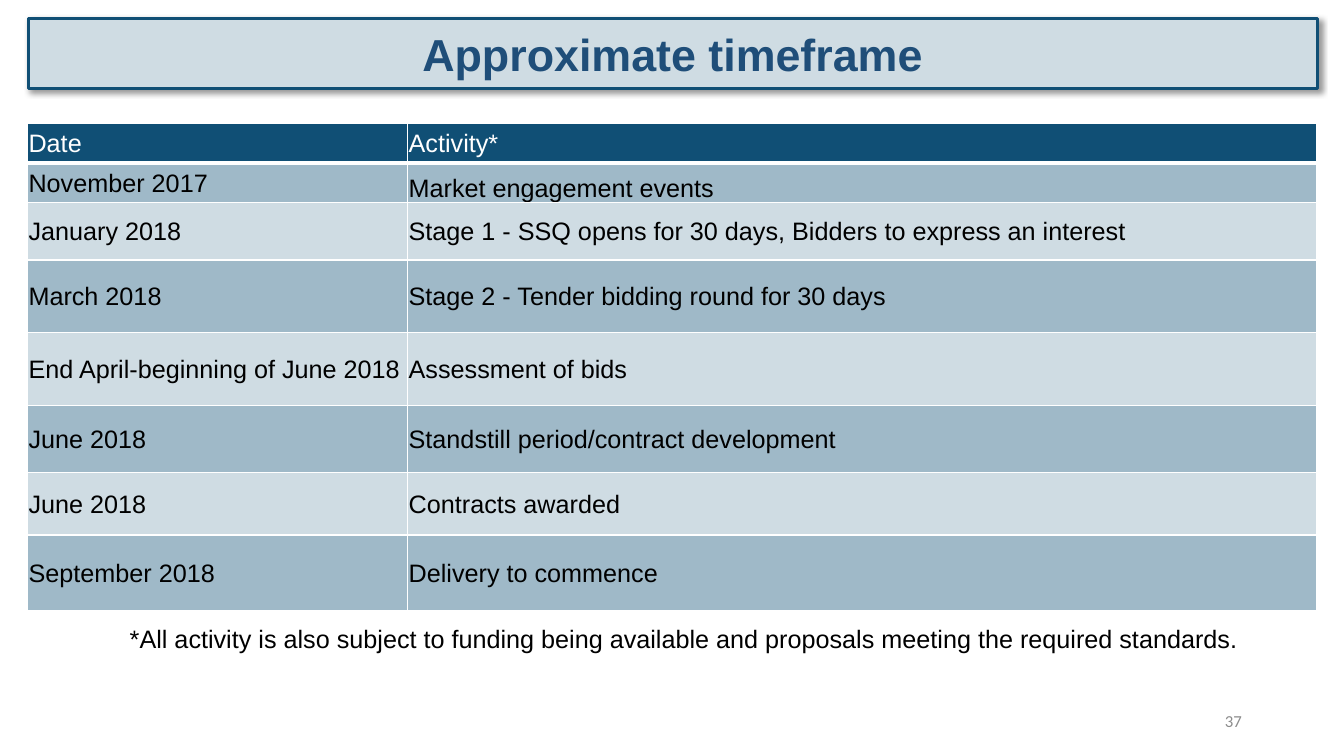
import pptx
import pptx.util
import pptx.dml.color
import pptx.enum.shapes
import pptx.enum.text
import pptx.oxml
import pptx.oxml.ns

Cm = pptx.util.Cm
Pt = pptx.util.Pt
ALIGN = pptx.enum.text.PP_ALIGN
ANCHOR = pptx.enum.text.MSO_ANCHOR

COLOURS = {
    "white": "FFFFFF",
    "black": "000000",
    "header": "104F75",
    "dark band": "9FB9C8",
    "light band": "CFDCE3",
    "title": "1F4E79",
    "page number": "8C8C8C",
}

TIMEFRAME = [
    ("Date", "Activity*"),
    ("November 2017", "Market engagement events"),
    ("January 2018", "Stage 1 - SSQ opens for 30 days, Bidders to express an interest"),
    ("March 2018", "Stage 2 - Tender bidding round for 30 days"),
    ("End April-beginning of June 2018", "Assessment of bids"),
    ("June 2018", "Standstill period/contract development"),
    ("June 2018", "Contracts awarded"),
    ("September 2018", "Delivery to commence"),
]
COLUMN_WIDTHS = [9.58, 22.91]
ROW_HEIGHTS = [0.99, 0.99, 1.45, 1.83, 1.83, 1.7, 1.57, 1.9]


def rgb(name):
    return pptx.dml.color.RGBColor.from_string(COLOURS[name])


def write(frame, text, size=18, font="Arial", colour="black", bold=False, align=ALIGN.LEFT):
    paragraph = frame.paragraphs[0]
    paragraph.alignment = align
    run = paragraph.add_run()
    run.text = text
    run.font.size = Pt(size)
    run.font.name = font
    run.font.bold = bold
    run.font.color.rgb = rgb(colour)


def add_box(slide, place, text, fill=None, line=None, anchor=ANCHOR.MIDDLE, **text_format):
    box = slide.shapes.add_shape(
        pptx.enum.shapes.MSO_SHAPE.RECTANGLE, *[Cm(length) for length in place])
    box.shadow.inherit = False
    if fill:
        box.fill.solid()
        box.fill.fore_color.rgb = rgb(fill)
    else:
        box.fill.background()
    if line:
        box.line.color.rgb = rgb(line)
        box.line.width = Pt(2.25)
    else:
        box.line.fill.background()
    box.text_frame.word_wrap = True
    box.text_frame.vertical_anchor = anchor
    write(box.text_frame, text, **text_format)
    return box


def add_shadow(box):
    effects = box._element.spPr.find(pptx.oxml.ns.qn("a:effectLst"))
    effects.append(pptx.oxml.parse_xml(
        f'<a:outerShdw {pptx.oxml.ns.nsdecls("a")} blurRad="{Pt(4)}" dist="{Pt(3)}" '
        f'dir="2700000" algn="tl" rotWithShape="0"><a:srgbClr val="{COLOURS["black"]}">'
        '<a:alpha val="40000"/></a:srgbClr></a:outerShdw>'))


def add_borders(cell, bottom=1):
    properties = cell._tc.get_or_add_tcPr()
    for side, width in (("L", 1), ("R", 1), ("T", 1), ("B", bottom)):
        properties.append(pptx.oxml.parse_xml(
            f'<a:ln{side} {pptx.oxml.ns.nsdecls("a")} w="{Pt(width)}"><a:solidFill>'
            f'<a:srgbClr val="{COLOURS["white"]}"/></a:solidFill></a:ln{side}>'))


def fill_cell(cell, text, fill, colour="black", anchor=ANCHOR.MIDDLE, bottom=1):
    add_borders(cell, bottom)
    cell.fill.solid()
    cell.fill.fore_color.rgb = rgb(fill)
    cell.margin_left = cell.margin_right = cell.margin_top = Cm(0.03)
    cell.margin_bottom = 0
    cell.vertical_anchor = anchor
    write(cell.text_frame, text, colour=colour)


def add_timeframe(slide):
    timeframe = slide.shapes.add_table(
        len(TIMEFRAME), len(COLUMN_WIDTHS), Cm(0.69), Cm(3.12),
        Cm(sum(COLUMN_WIDTHS)), Cm(sum(ROW_HEIGHTS))).table
    for column, width in zip(timeframe.columns, COLUMN_WIDTHS):
        column.width = Cm(width)
    for row, height in zip(timeframe.rows, ROW_HEIGHTS):
        row.height = Cm(height)
    for r, entries in enumerate(TIMEFRAME):
        for c, text in enumerate(entries):
            cell = timeframe.cell(r, c)
            if r == 0:
                fill_cell(cell, text, "header", colour="white", bottom=3)
            else:
                band = "dark band" if r % 2 else "light band"
                anchor = ANCHOR.BOTTOM if (r, c) == (1, 1) else ANCHOR.MIDDLE
                fill_cell(cell, text, band, anchor=anchor)


def main():
    deck = pptx.Presentation()
    deck.slide_width, deck.slide_height = Cm(33.87), Cm(19.05)
    slide = deck.slides.add_slide(deck.slide_layouts[6])

    # Page number
    add_box(slide, (23.93, 17.65, 7.62, 1.02), "37", size=12, font="Calibri",
            colour="page number", align=ALIGN.RIGHT)

    # Footnote
    add_box(slide, (3.02, 15.57, 28.93, 1.02),
            "*All activity is also subject to funding being available and proposals "
            "meeting the required standards.", fill="white", anchor=ANCHOR.TOP)

    # Table of dates and activities
    add_timeframe(slide)

    # Title banner
    title = add_box(slide, (0.71, 0.46, 32.49, 1.78), "Approximate timeframe",
                    fill="light band", line="header", size=32, colour="title",
                    bold=True, align=ALIGN.CENTER)
    add_shadow(title)

    deck.save("out.pptx")


if __name__ == "__main__":
    main()
